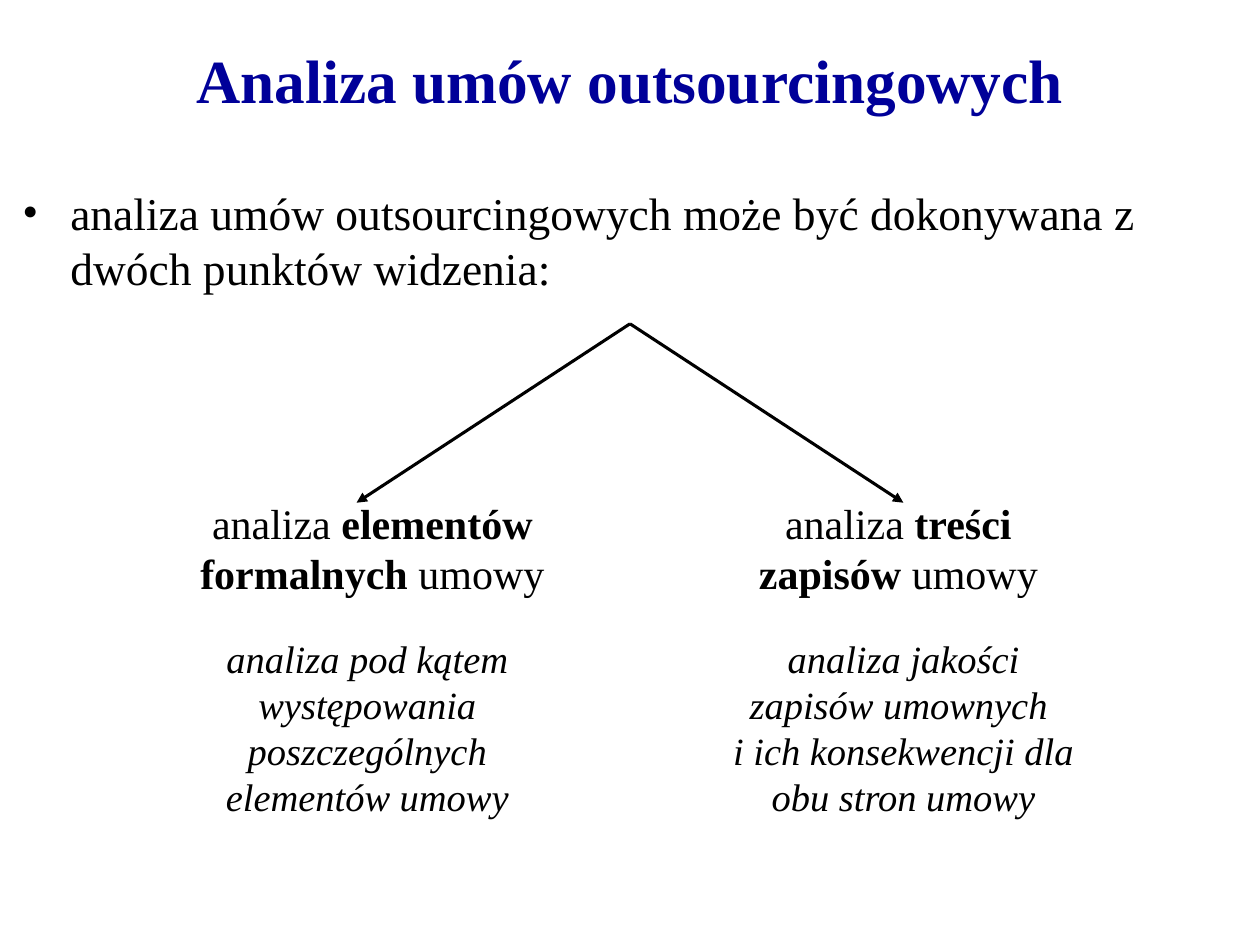
from lxml.etree import SubElement
from pptx import Presentation
from pptx.dml.color import RGBColor as RGB
from pptx.enum.shapes import MSO_CONNECTOR as LINK
from pptx.enum.text import MSO_ANCHOR as ANCHOR, PP_ALIGN as ALIGN
from pptx.oxml.ns import qn
from pptx.util import Inches, Pt

COLORS = {"title": "000099", "text": "000000"}
FONT = "Times New Roman"


def add_text(shapes, box, parts, size, color="text", align=ALIGN.CENTER,
             bold=False, italic=False):
    """Add a one-paragraph box; every second part is bold."""
    frame = shapes.add_textbox(*map(Inches, box)).text_frame
    frame.word_wrap = True
    para = frame.paragraphs[0]
    para.alignment = align
    for i, part in enumerate(parts):
        for j, line in enumerate(part.split("\n")):
            if j:
                para.add_line_break()
            run = para.add_run()
            run.text = line
            font = run.font
            font.name, font.size = FONT, Pt(size)
            font.bold, font.italic = bold or i % 2 == 1, italic
            font.color.rgb = RGB.from_string(COLORS[color])
    return frame


def add_title(shapes, box, text):
    frame = add_text(shapes, box, [text], 35, "title", bold=True)
    frame.vertical_anchor = ANCHOR.MIDDLE


def add_bullet(shapes, box, text):
    frame = add_text(shapes, box, [text], 26, align=ALIGN.LEFT)
    props = frame.paragraphs[0]._p.get_or_add_pPr()
    props.set("marL", str(Inches(0.38)))
    props.set("indent", str(-Inches(0.38)))
    SubElement(props, qn("a:buFont"), typeface=FONT)
    SubElement(props, qn("a:buChar"), char="•")


def add_arrow(shapes, start, end):
    arrow = shapes.add_connector(LINK.STRAIGHT, *map(Inches, start + end))
    arrow.line.color.rgb = RGB.from_string(COLORS["text"])
    arrow.line.width = Pt(1.75)
    SubElement(arrow.line._get_or_add_ln(), qn("a:tailEnd"), type="triangle")
    SubElement(arrow._element.spPr, qn("a:effectLst"))


def add_branch(slide, apex, tip, head, head_box, note, note_box):
    """Group an arrow with a heading and a note; boxes are (left, width)."""
    shapes = slide.shapes.add_group_shape().shapes
    top = tip[1]
    left, width = head_box
    add_text(shapes, (left, top - 0.09, width, 0.9), head, 24)
    add_arrow(shapes, apex, tip)
    left, width = note_box
    add_text(shapes, (left, top + 1, width, 1.57), [note], 22, italic=True)


def main():
    deck = Presentation()
    deck.slide_width, deck.slide_height = Inches(10), Inches(7.5)
    slide = deck.slides.add_slide(deck.slide_layouts[6])
    add_title(slide.shapes, (0.75, 0, 8.5, 1.25),
              "Analiza umów outsourcingowych")
    add_bullet(slide.shapes, (0.08, 1.42, 9.83, 2.33),
               "analiza umów outsourcingowych może być dokonywana z dwóch "
               "punktów widzenia:")
    apex, reach, low = (5, 2.57), 2.17, 3.99
    add_branch(slide, apex, (apex[0] - reach, low),
               ["analiza ", "elementów formalnych", " umowy"], (1.33, 3.25),
               "analiza pod kątem występowania poszczególnych elementów umowy",
               (1.25, 3.33))
    add_branch(slide, apex, (apex[0] + reach, low),
               ["analiza", " treści zapisów", " umowy"], (5.92, 2.42),
               "analiza jakości zapisów umownych \n"
               "i ich konsekwencji dla obu stron umowy", (5.67, 3))
    deck.save("out.pptx")


if __name__ == "__main__":
    main()
